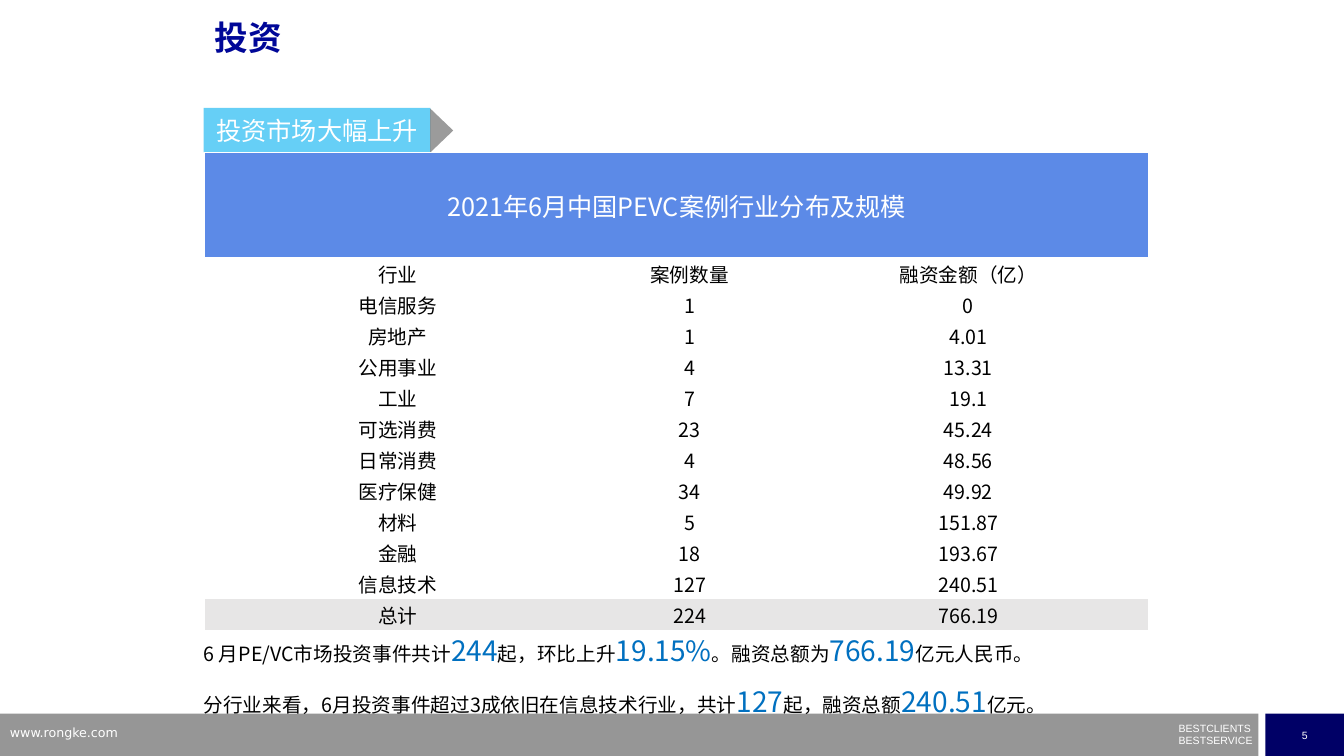
from dataclasses import dataclass

from lxml import etree
from pptx import Presentation
from pptx.dml.color import RGBColor
from pptx.enum.shapes import MSO_SHAPE
from pptx.enum.text import MSO_ANCHOR, PP_ALIGN
from pptx.oxml.ns import qn
from pptx.util import Inches, Pt

RECT, TRIANGLE = MSO_SHAPE.RECTANGLE, MSO_SHAPE.ISOSCELES_TRIANGLE
TOP, MIDDLE = MSO_ANCHOR.TOP, MSO_ANCHOR.MIDDLE
LEFT, CENTER, JUSTIFY = PP_ALIGN.LEFT, PP_ALIGN.CENTER, PP_ALIGN.JUSTIFY


@dataclass(frozen=True)
class Theme:
    body_font: str = "Noto Sans CJK SC"
    title_font: str = "Arial"
    site_font: str = "DejaVu Sans"
    white: str = "FFFFFF"
    black: str = "000000"
    title: str = "000798"
    figure: str = "0070C0"
    tag: str = "00B0F0"
    tag_tip: str = "595959"
    header: str = "5C8AE7"
    total: str = "E7E6E6"
    footer: str = "969696"
    page: str = "000066"
    title_size: float = 24
    figure_size: float = 20
    heading_size: float = 18
    body_size: float = 14
    site_size: float = 9
    small_size: float = 7.5


THEME = Theme()

INDUSTRIES = [
    ("行业", "案例数量", "融资金额（亿）"),
    ("电信服务", "1", "0"),
    ("房地产", "1", "4.01"),
    ("公用事业", "4", "13.31"),
    ("工业", "7", "19.1"),
    ("可选消费", "23", "45.24"),
    ("日常消费", "4", "48.56"),
    ("医疗保健", "34", "49.92"),
    ("材料", "5", "151.87"),
    ("金融", "18", "193.67"),
    ("信息技术", "127", "240.51"),
    ("总计", "224", "766.19"),
]

# Ordinary text and highlighted figures alternate
SUMMARY = [
    ["6 月PE/VC市场投资事件共计", "244", "起，环比上升", "19.15%", "。融资总额为",
     "766.19", "亿元人民币。"],
    ["分行业来看，6月投资事件超过3成依旧在信息技术行业，共计", "127",
     "起，融资总额", "240.51", "亿元。"],
]


def apply(target, formats):
    for attribute, value in formats.items():
        setattr(target, attribute, value)


def add_run(paragraph, text, size, color, font=THEME.body_font, bold=False):
    run = paragraph.add_run()
    run.text = text
    run.font.color.rgb = RGBColor.from_string(color)
    apply(run.font, {"size": Pt(size), "bold": bold, "name": font})
    east_asian = etree.SubElement(run.font._element, qn("a:ea"))
    east_asian.set("typeface", THEME.body_font)


def write(frame, paragraphs, align=LEFT, spacing=1.0):
    """Each paragraph is a list of argument tuples for add_run."""
    for index, runs in enumerate(paragraphs):
        paragraph = frame.add_paragraph() if index else frame.paragraphs[0]
        apply(paragraph, {"alignment": align, "line_spacing": spacing})
        for run in runs:
            add_run(paragraph, *run)


def set_frame(frame, anchor=TOP, wrap=True, inset=None):
    apply(frame, {"vertical_anchor": anchor, "word_wrap": wrap})
    if inset is not None:
        sides = ("left", "top", "right", "bottom")
        apply(frame, {f"margin_{side}": Inches(inset) for side in sides})


def add_block(shapes, kind, box, color, opacity=None):
    block = shapes.add_shape(kind, *map(Inches, box))
    block.shadow.inherit = False
    block.fill.solid()
    block.fill.fore_color.rgb = RGBColor.from_string(color)
    block.line.fill.background()
    if opacity:
        tint = block._element.spPr.find(".//" + qn("a:srgbClr"))
        etree.SubElement(tint, qn("a:alpha")).set("val", str(opacity * 1000))
    return block


def add_text(shapes, box, paragraphs, inset=None, **layout):
    frame = shapes.add_textbox(*map(Inches, box)).text_frame
    set_frame(frame, inset=inset)
    write(frame, paragraphs, **layout)


def set_borders(cell, color=None):
    properties = cell._tc.get_or_add_tcPr()
    for side in ("lnL", "lnR", "lnT", "lnB"):
        border = etree.SubElement(properties, qn("a:" + side), w=str(Pt(1)))
        if color:
            fill = etree.SubElement(border, qn("a:solidFill"))
            etree.SubElement(fill, qn("a:srgbClr"), val=color)
        else:
            etree.SubElement(border, qn("a:noFill"))


def fill_cell(cell, text, size, text_color, fill=None, border=THEME.white):
    set_borders(cell, border)
    if fill:
        cell.fill.solid()
        cell.fill.fore_color.rgb = RGBColor.from_string(fill)
    else:
        cell.fill.background()
    edge = Inches(0.01)
    apply(cell, {"vertical_anchor": MIDDLE, "margin_left": edge, "margin_top": edge,
                 "margin_right": edge, "margin_bottom": 0})
    write(cell.text_frame, [[(text, size, text_color)]], CENTER)


def add_title(slide):
    title = slide.shapes.title
    apply(title, {"left": Inches(2.03), "top": Inches(0.16),
                  "width": Inches(9), "height": Inches(0.7)})
    set_frame(title.text_frame)
    write(title.text_frame,
          [[("投资", THEME.title_size, THEME.title, THEME.title_font, True)]], spacing=0.9)


def add_footer(shapes):
    add_block(shapes, RECT, (0, 7.08, 12.48, 0.42), THEME.footer)
    page = add_block(shapes, RECT, (12.55, 7.08, 0.78, 0.42), THEME.page)
    small = (THEME.small_size, THEME.white, THEME.title_font)
    set_frame(page.text_frame, MIDDLE, wrap=False)
    write(page.text_frame, [[("5", *small)]], CENTER)
    add_text(shapes, (11.69, 7.16, 0.76, 0.24),
             [[("BESTCLIENTS", *small)], [("BESTSERVICE", *small)]], inset=0)
    add_text(shapes, (0, 7.14, 3.2, 0.26),
             [[("www.rongke.com", THEME.site_size, THEME.white, THEME.site_font)]])


def add_tag(shapes):
    tag = shapes.add_group_shape().shapes
    label = add_block(tag, RECT, (2.02, 1.07, 2.25, 0.44), THEME.tag, 60)
    set_frame(label.text_frame, MIDDLE)
    write(label.text_frame,
          [[("投资市场大幅上升", THEME.heading_size, THEME.white)]], CENTER)
    tip = add_block(tag, TRIANGLE, (4.16, 1.18, 0.44, 0.23), THEME.tag_tip, 60)
    tip.rotation = 90


def add_industry_table(shapes):
    widths, height, header_height = (3.83, 1.96, 3.57), 4.74, 1.05
    table = shapes.add_table(len(INDUSTRIES) + 1, len(widths), Inches(2.03), Inches(1.51),
                             Inches(sum(widths)), Inches(height)).table
    apply(table, {"first_row": False, "horz_banding": False})
    for column, width in zip(table.columns, widths):
        column.width = Inches(width)
    for row in table.rows:
        row.height = Inches((height - header_height) / len(INDUSTRIES))
    table.rows[0].height = Inches(header_height)

    # Merged heading
    heading = table.cell(0, 0)
    heading.merge(table.cell(0, len(widths) - 1))
    fill_cell(heading, "2021年6月中国PEVC案例行业分布及规模",
              THEME.heading_size, THEME.white, THEME.header)

    # Industries, with the total shaded
    for r, values in enumerate(INDUSTRIES, 1):
        is_total = r == len(INDUSTRIES)
        look = {"fill": THEME.total, "border": None} if is_total else {}
        for c, value in enumerate(values):
            fill_cell(table.cell(r, c), value, THEME.body_size, THEME.black, **look)


def add_summary(shapes):
    styles = ((THEME.body_size, THEME.black), (THEME.figure_size, THEME.figure))
    paragraphs = [[(text, *styles[i % 2]) for i, text in enumerate(parts)]
                  for parts in SUMMARY]
    add_text(shapes, (2.02, 6.12, 9.87, 0.95), paragraphs,
             inset=0, align=JUSTIFY, spacing=1.5)


def main():
    prs = Presentation()
    apply(prs, {"slide_width": Inches(13.33), "slide_height": Inches(7.5)})
    slide = prs.slides.add_slide(prs.slide_layouts[5])
    add_footer(slide.shapes)
    add_tag(slide.shapes)
    add_summary(slide.shapes)
    add_title(slide)
    add_industry_table(slide.shapes)
    prs.save("out.pptx")


if __name__ == "__main__":
    main()
